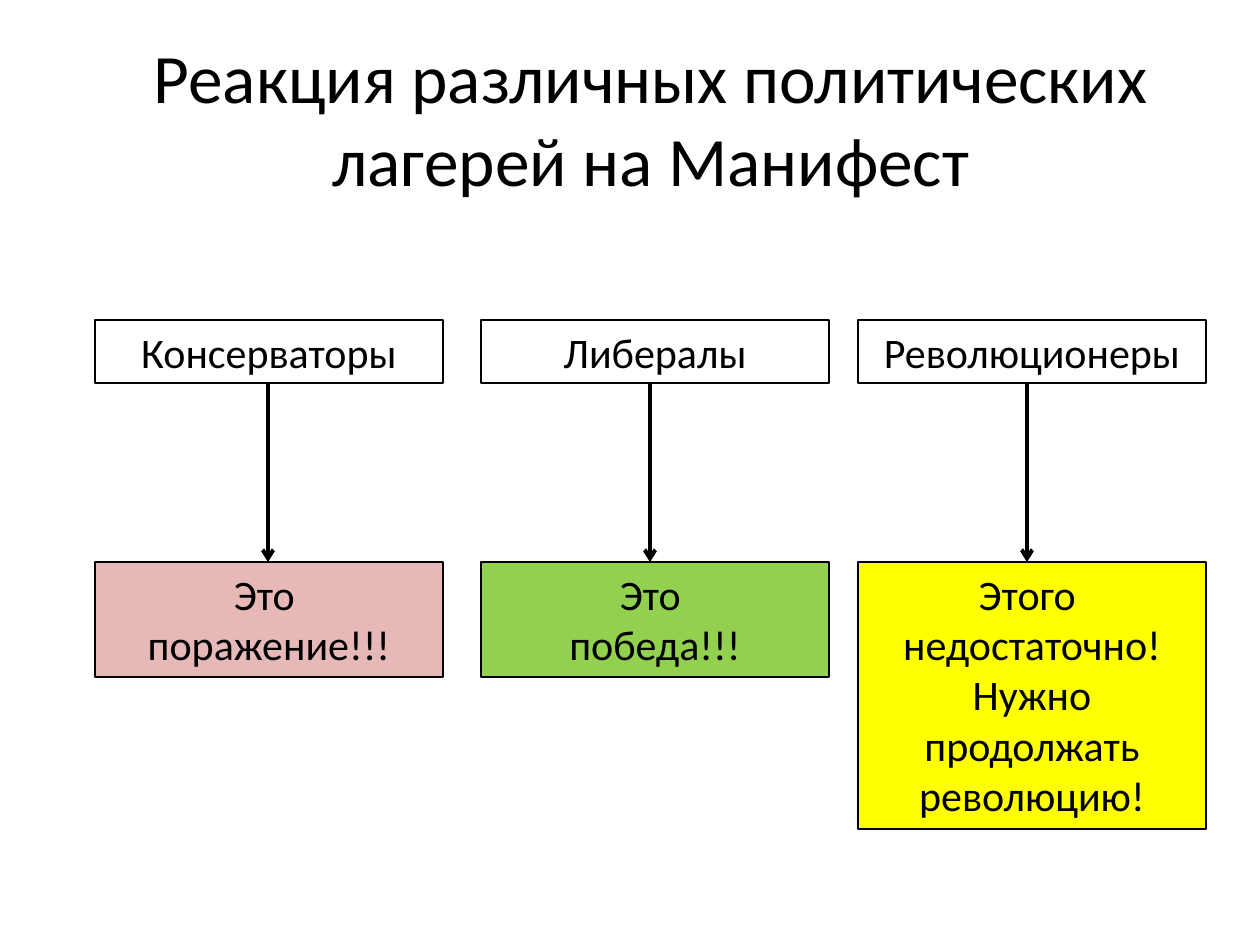
from lxml import etree
from pptx import Presentation
from pptx.dml.color import RGBColor
from pptx.enum.shapes import MSO_CONNECTOR, MSO_SHAPE
from pptx.enum.text import MSO_ANCHOR, MSO_AUTO_SIZE, PP_ALIGN
from pptx.oxml.ns import qn
from pptx.util import Emu, Pt

RECTANGLE = MSO_SHAPE.RECTANGLE
STRAIGHT = MSO_CONNECTOR.STRAIGHT
TOP, MIDDLE = MSO_ANCHOR.TOP, MSO_ANCHOR.MIDDLE
NO_RESIZE = MSO_AUTO_SIZE.NONE
CENTER = PP_ALIGN.CENTER
SCALE = 914400 / 126
BLACK = "000000"

BOX_WIDTH, HEADER_TOP, HEADER_HEIGHT, REACTION_TOP = 348, 320, 63, 562
CAMPS = [
    (95, 268, "Консерваторы", ["Это ", "поражение!!!"], "E6B9B8", 115),
    (481, 650, "Либералы", ["Это ", "победа!!!"], "92D050", 115),
    (858, 1027, "Революционеры",
     ["Этого ", "недостаточно! Нужно продолжать революцию!"], "FFFF00", 267),
]


def px(length):
    return Emu(round(length * SCALE))


def color(value):
    return RGBColor.from_string(value)


class SlideBuilder:
    """Holds the style and the current slide, and adds elements to it."""

    font_name = "Calibri"
    title_size = 39.6
    text_size = 24
    border_width = 0.75
    arrow_width = 2.25

    def __init__(self, slide):
        self.slide = slide

    def set_text(self, shape, lines, size, anchor):
        frame = shape.text_frame
        frame_format = {"word_wrap": True, "auto_size": NO_RESIZE, "vertical_anchor": anchor}
        for name, value in frame_format.items():
            setattr(frame, name, value)
        frame.text = "\n".join(lines)
        font_format = {"name": self.font_name, "size": Pt(size)}
        for paragraph in frame.paragraphs:
            paragraph.alignment = CENTER
            for run in paragraph.runs:
                for name, value in font_format.items():
                    setattr(run.font, name, value)
                run.font.color.rgb = color(BLACK)

    def stroke(self, line, width):
        line.width = Pt(width)
        line.color.rgb = color(BLACK)

    def title(self, text, left, top, width, height):
        shape = self.slide.shapes.title
        place = {"left": left, "top": top, "width": width, "height": height}
        for name, value in place.items():
            setattr(shape, name, px(value))
        self.set_text(shape, [text], self.title_size, MIDDLE)

    def box(self, lines, left, top, width, height, fill=None):
        shape = self.slide.shapes.add_shape(RECTANGLE, *map(px, (left, top, width, height)))
        shape.shadow.inherit = False
        if fill:
            shape.fill.solid()
            shape.fill.fore_color.rgb = color(fill)
        else:
            shape.fill.background()
        self.stroke(shape.line, self.border_width)
        self.set_text(shape, lines, self.text_size, TOP)

    def down_arrow(self, x, top, bottom):
        connector = self.slide.shapes.add_connector(STRAIGHT, *map(px, (x, top, x, bottom)))
        self.stroke(connector.line, self.arrow_width)
        properties = connector.element.spPr
        etree.SubElement(properties.find(qn("a:ln")), qn("a:tailEnd"), type="arrow")
        etree.SubElement(properties, qn("a:effectLst"))


def main():
    presentation = Presentation()
    presentation.slide_width, presentation.slide_height = px(1260), px(945)
    builder = SlideBuilder(presentation.slides.add_slide(presentation.slide_layouts[5]))
    builder.title("Реакция различных политических лагерей на Манифест", 84, 38, 1134, 158)
    for left, arrow_x, camp, reaction, fill, height in CAMPS:
        builder.box([camp], left, HEADER_TOP, BOX_WIDTH, HEADER_HEIGHT)
        builder.box(reaction, left, REACTION_TOP, BOX_WIDTH, height, fill)
        builder.down_arrow(arrow_x, HEADER_TOP + HEADER_HEIGHT, REACTION_TOP)
    presentation.save("out.pptx")


if __name__ == "__main__":
    main()
